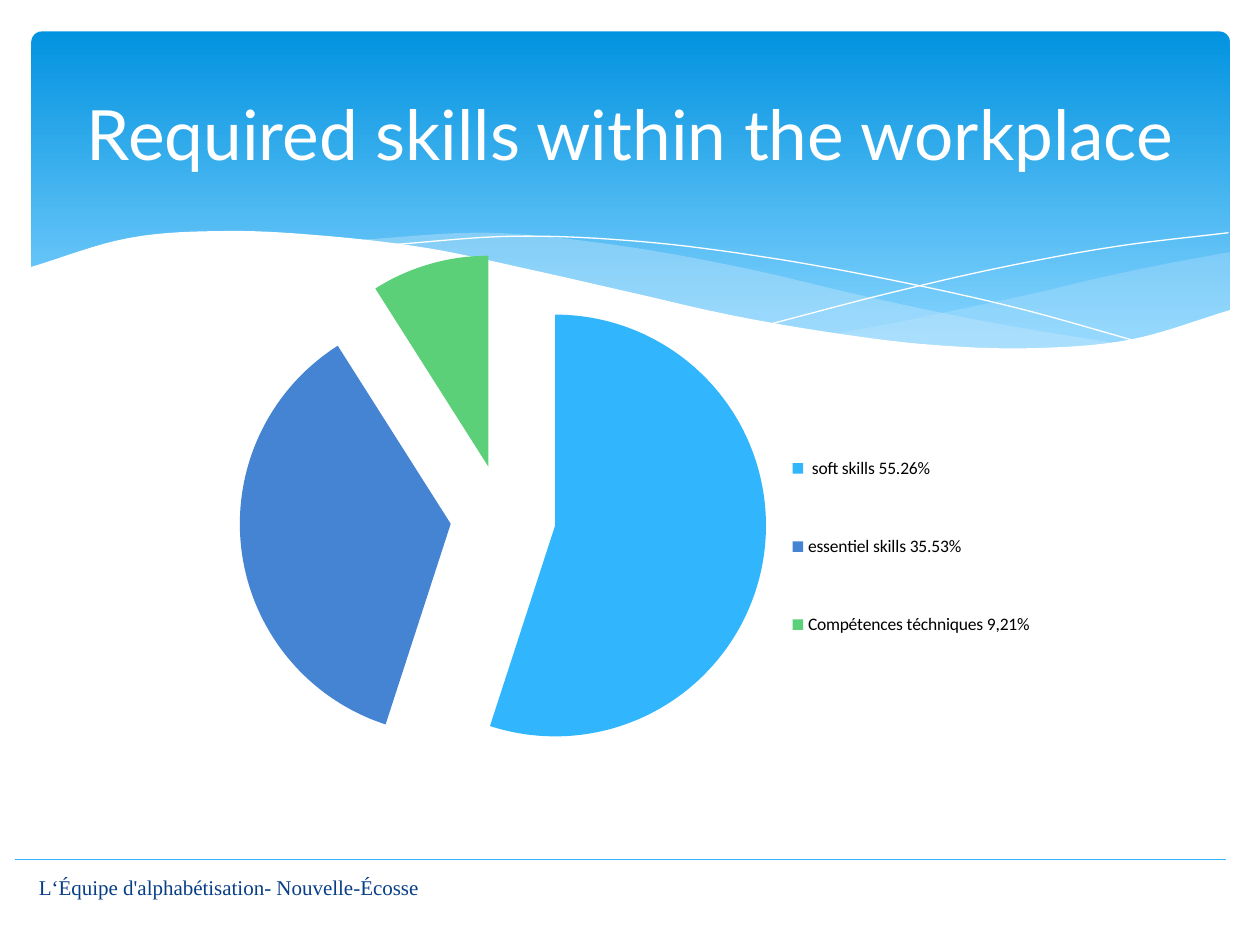
import pptx
import pptx.chart.data
import pptx.dml.color
import pptx.enum.chart
import pptx.enum.shapes
import pptx.enum.text
import pptx.oxml.ns
import pptx.util
from lxml import etree

Pt = pptx.util.Pt
qn = pptx.oxml.ns.qn

COLORS = {name: pptx.dml.color.RGBColor.from_string(value) for name, value in {
    "white": "FFFFFF", "black": "000000", "banner top": "0293E0",
    "banner bottom": "83D3FE", "wave": "C6E7FC", "rule": "31B6FD",
    "footer": "073E87", "soft": "31B6FD", "essential": "4584D3",
    "technical": "5BD078"}.items()}

# Opacity in percent (None for a line), then curves: first x, last x and
# the heights at equal steps between them, in points
WAVES = [
    (29, [(703, 476, [144, 151, 159, 168, 176, 184, 191]),
          (476, 703, [191, 195, 199, 200, 197, 190, 178])]),
    (40, [(643, 206, [197, 185, 170, 153, 140, 133, 137]),
          (206, 643, [137, 150, 166, 182, 194, 200, 197])]),
    (None, [(222, 653, [140, 135, 138, 147, 160, 176, 196])]),
    (None, [(441, 702, [185, 168, 153, 141, 133])]),
    (100, [(703.5, 16.5, [177, 194, 199, 197, 190, 180, 167, 154, 142, 135, 132, 136, 153]),
           (16.5, 703.5, [237, 237])]),
]
STEPS = 8


def smooth(first, last, heights):
    """Return the points of a Catmull-Rom curve through equally spaced heights."""
    padded = [2 * heights[0] - heights[1], *heights, 2 * heights[-1] - heights[-2]]
    count = len(heights) - 1
    points = []
    for index in range(count):
        a, b, c, d = padded[index:index + 4]
        for step in range(STEPS):
            t = step / STEPS
            y = b + t / 2 * (c - a + t * (2 * a - 5 * b + 4 * c - d
                                          + t * (3 * b - a - 3 * c + d)))
            points.append((Pt(first + (last - first) * (index + t) / count), Pt(y)))
    return points + [(Pt(last), Pt(heights[-1]))]


def add_text(shape, text, font, size, color, alignment):
    frame = shape.text_frame
    frame.word_wrap = True
    frame.vertical_anchor = pptx.enum.text.MSO_ANCHOR.MIDDLE
    paragraph = frame.paragraphs[0]
    paragraph.alignment = alignment
    run = paragraph.add_run()
    run.text = text
    run.font.name = font
    run.font.size = Pt(size)
    run.font.color.rgb = COLORS[color]


presentation = pptx.Presentation()
presentation.slide_width = Pt(720)
presentation.slide_height = Pt(540)
slide = presentation.slides.add_slide(presentation.slide_layouts[5])
shapes = slide.shapes

# Banner with waves
banner = shapes.add_shape(pptx.enum.shapes.MSO_SHAPE.ROUNDED_RECTANGLE,
                          Pt(18), Pt(18), Pt(684.7), Pt(194.4))
banner.adjustments[0] = 0.03
banner.shadow.inherit = False
banner.line.fill.background()
banner.fill.gradient()
banner.fill.gradient_angle = 270
for stop, position, color in zip(banner.fill.gradient_stops, (0, 0.9),
                                 ("banner top", "banner bottom")):
    stop.position = position
    stop.color.rgb = COLORS[color]

for opacity, curves in WAVES:
    points = [point for curve in curves for point in smooth(*curve)]
    builder = shapes.build_freeform(*points[0])
    builder.add_line_segments(points[1:], close=opacity is not None)
    wave = builder.convert_to_shape()
    wave.shadow.inherit = False
    if opacity is None:
        wave.fill.background()
        wave.line.color.rgb = COLORS["white"]
        wave.line.width = Pt(0)
        continue
    wave.line.fill.background()
    wave.fill.solid()
    wave.fill.fore_color.rgb = COLORS["white" if opacity == 100 else "wave"]
    if opacity < 100:
        color_element = wave._element.spPr.find(qn("a:solidFill"))[0]
        etree.SubElement(color_element, qn("a:alpha"), val=str(opacity * 1000))

# Title, brought in front of the banner
title = shapes.title
title.left, title.top, title.width, title.height = Pt(36), Pt(26.6), Pt(648), Pt(98.6)
add_text(title, "Required skills within the workplace", "Lato", 39.6, "white",
         pptx.enum.text.PP_ALIGN.CENTER)
title._element.getparent().append(title._element)

# Footer
rule = shapes.add_connector(pptx.enum.shapes.MSO_CONNECTOR.STRAIGHT,
                            Pt(8.6), Pt(491), Pt(700.6), Pt(491))
rule.line.color.rgb = COLORS["rule"]
rule.line.width = Pt(0.75)
etree.SubElement(rule._element.spPr, qn("a:effectLst"))
footer = shapes.add_textbox(Pt(15.1), Pt(492.5), Pt(298), Pt(28.8))
add_text(footer, "L‘Équipe d'alphabétisation- Nouvelle-Écosse", "Times New Roman", 12,
         "footer", pptx.enum.text.PP_ALIGN.LEFT)

# Exploded pie of skills
data = pptx.chart.data.CategoryChartData()
data.categories = [" soft skills 55.26%", "essentiel skills 35.53%",
                   "Compétences téchniques 9,21%"]
data.add_series("Series 1", (55, 36, 9))
chart = shapes.add_chart(pptx.enum.chart.XL_CHART_TYPE.PIE, Pt(127.4), Pt(128.2),
                         Pt(470.9), Pt(334.8), data).chart
chart.has_title = False
chart.font.name = "Calibri"
chart.font.size = Pt(10)
chart.font.color.rgb = COLORS["black"]
chart.has_legend = True
chart.legend.position = pptx.enum.chart.XL_LEGEND_POSITION.RIGHT
chart.legend.include_in_layout = False

# Places of the pie and the legend as fractions of the chart
for part, index, place in (
        (chart._chartSpace.chart.plotArea, 0, (0.02, 0.05, 0.64, 0.9)),
        (chart.legend._element, 1, (0.68, 0.3, 0.31, 0.5))):
    for automatic in part.findall(qn("c:layout")):
        part.remove(automatic)
    layout = etree.Element(qn("c:layout"))
    manual = etree.SubElement(layout, qn("c:manualLayout"))
    if index == 0:
        etree.SubElement(manual, qn("c:layoutTarget"), val="inner")
    for mode in ("xMode", "yMode"):
        etree.SubElement(manual, qn("c:" + mode), val="edge")
    for name, fraction in zip("xywh", place):
        etree.SubElement(manual, qn("c:" + name), val=str(fraction))
    part.insert(index, layout)

plot = chart.plots[0]
plot.vary_by_categories = True
series = plot.series[0]
for index, color in enumerate(("soft", "essential", "technical")):
    point_format = series.points[index].format
    point_format.fill.solid()
    point_format.fill.fore_color.rgb = COLORS[color]
    point_format.line.fill.background()
for point in series._element.findall(qn("c:dPt")):
    explosion = etree.Element(qn("c:explosion"), val="25")
    point.find(qn("c:spPr")).addprevious(explosion)
series._element.find(qn("c:tx")).addnext(etree.Element(qn("c:explosion"), val="25"))

presentation.save("out.pptx")
